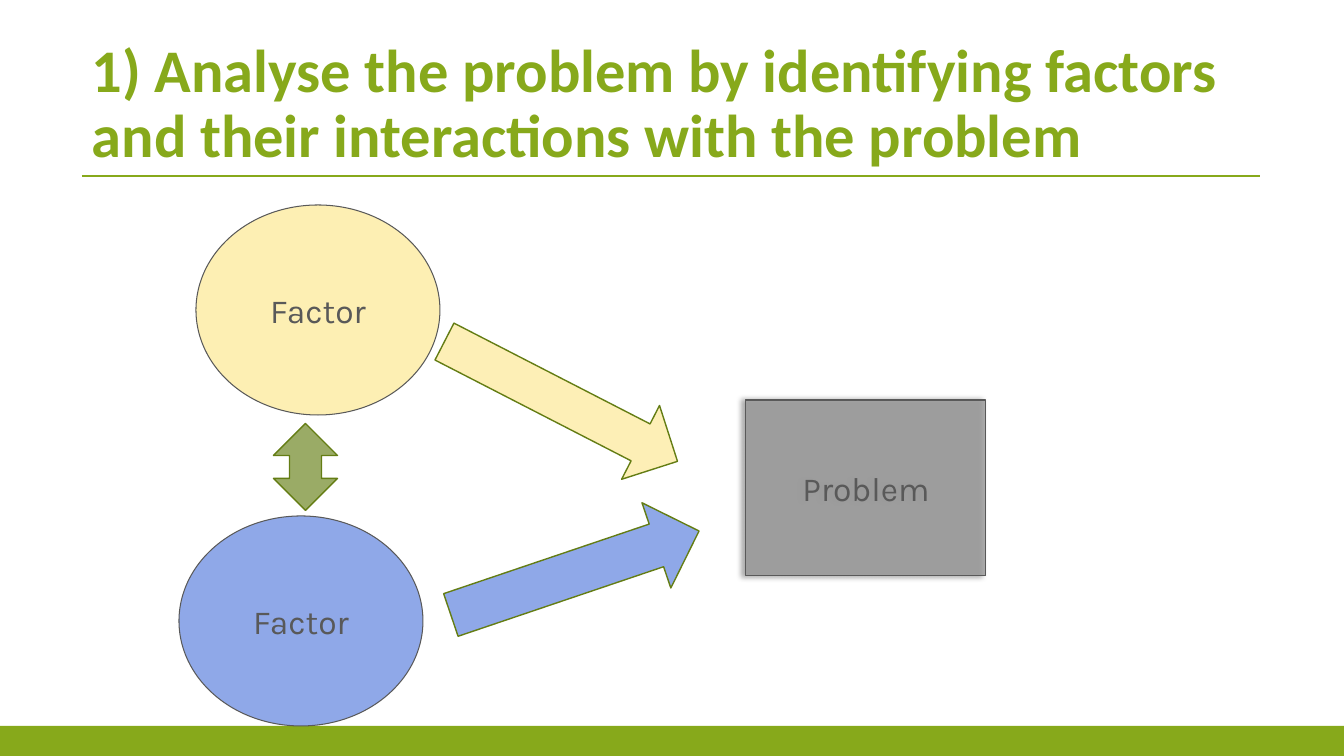
import pptx
import pptx.util
import pptx.dml.color
import pptx.enum.shapes
import pptx.enum.text
import pptx.oxml
import pptx.oxml.ns

SHAPE = pptx.enum.shapes.MSO_SHAPE
COLORS = {
    "green": "87A91B", "dark_green": "647D14", "olive": "657F14",
    "yellow": "FDE270", "pale_yellow": "FDEBA0", "blue": "8FA8E8",
    "grey": "999999", "text": "595959", "shadow": "000000",
}
TITLE = "1) Analyse the problem by identifying factors and their interactions with the problem"
TITLE_BOX = (82, 50, 1178, 126)
FOOTER_BOX = (0, 726, 1344, 30)

# label, preset, (left, top, width, height), fill, opacity %, has shadow
CONCEPTS = [
    ("Factor", SHAPE.OVAL, (196, 205, 244, 210), "yellow", 53, False),
    ("Factor", SHAPE.OVAL, (179, 516, 244, 210), "blue", 100, False),
    ("Problem", SHAPE.RECTANGLE, (746, 400, 240, 176), "grey", 80, True),
]
# preset, box before rotation, rotation, fill, opacity %
ARROWS = [
    (SHAPE.RIGHT_ARROW, (430, 360, 262, 83), 27.2, "pale_yellow", 76),
    (SHAPE.RIGHT_ARROW, (444, 528, 262, 90), 341.3, "blue", 100),
    (SHAPE.LEFT_RIGHT_ARROW, (262, 435, 87, 64), 90, "olive", 65),
]
TITLE_FORMAT = {"size": pptx.util.Pt(43.2), "name": "Calibri", "bold": True}
LABEL_FORMAT = {"size": pptx.util.Pt(24), "name": "Karla", "bold": False}

px = lambda length: round(length * 914400 / 100.8)
rgb = lambda name: pptx.dml.color.RGBColor.from_string(COLORS[name])


def write(shape, words, font_format, color, frame_format, paragraph_format):
    frame = shape.text_frame
    for key, value in frame_format.items():
        setattr(frame, key, value)
    paragraph = frame.paragraphs[0]
    for key, value in paragraph_format.items():
        setattr(paragraph, key, value)
    run = paragraph.add_run()
    run.text = words
    for key, value in font_format.items():
        setattr(run.font, key, value)
    run.font.color.rgb = rgb(color)


def draw(slide, preset, box, fill, opacity=100, line=None, weight=1):
    shape = slide.shapes.add_shape(preset, *map(px, box))
    shape.shadow.inherit = False
    shape.fill.solid()
    shape.fill.fore_color.rgb = rgb(fill)
    if opacity < 100:
        color = shape._element.spPr.find(".//" + pptx.oxml.ns.qn("a:srgbClr"))
        alpha = pptx.oxml.parse_xml(
            f'<a:alpha {pptx.oxml.ns.nsdecls("a")} val="{opacity * 1000}"/>')
        color.append(alpha)
    if line:
        shape.line.color.rgb = rgb(line)
        shape.line.width = pptx.util.Pt(weight)
    else:
        shape.line.fill.background()
    return shape


def cast_shadow(shape):
    """Add a soft shadow that falls to the left."""
    effects = shape._element.spPr.find(pptx.oxml.ns.qn("a:effectLst"))
    effects.append(pptx.oxml.parse_xml(
        f'<a:outerShdw {pptx.oxml.ns.nsdecls("a")} blurRad="{pptx.util.Pt(4)}" '
        f'dist="{pptx.util.Pt(3)}" dir="{180 * 60000}" rotWithShape="0">'
        f'<a:srgbClr val="{COLORS["shadow"]}"><a:alpha val="40000"/></a:srgbClr>'
        '</a:outerShdw>'))


def main():
    deck = pptx.Presentation()
    deck.slide_width, deck.slide_height = px(1344), px(756)
    slide = deck.slides.add_slide(deck.slide_layouts[6])

    draw(slide, SHAPE.RECTANGLE, FOOTER_BOX, "green")
    left, top, width, height = TITLE_BOX
    rule = slide.shapes.add_connector(
        pptx.enum.shapes.MSO_CONNECTOR.STRAIGHT,
        px(left), px(top + height), px(left + width), px(top + height))
    rule.line.color.rgb = rgb("green")
    rule.line.width = pptx.util.Pt(1.5)
    rule._element.spPr.append(
        pptx.oxml.parse_xml(f'<a:effectLst {pptx.oxml.ns.nsdecls("a")}/>'))

    title = slide.shapes.add_textbox(*map(px, TITLE_BOX))
    write(title, TITLE, TITLE_FORMAT, "green",
          {"word_wrap": True, "vertical_anchor": pptx.enum.text.MSO_ANCHOR.BOTTOM},
          {"line_spacing": 0.9})

    for label, preset, box, fill, opacity, has_shadow in CONCEPTS:
        concept = draw(slide, preset, box, fill, opacity, "text", 0.75)
        if has_shadow:
            cast_shadow(concept)
        write(concept, label, LABEL_FORMAT, "text",
              {"word_wrap": False, "vertical_anchor": pptx.enum.text.MSO_ANCHOR.MIDDLE},
              {"alignment": pptx.enum.text.PP_ALIGN.CENTER})

    for preset, box, rotation, fill, opacity in ARROWS:
        arrow = draw(slide, preset, box, fill, opacity, "dark_green")
        arrow.rotation = rotation

    deck.save("out.pptx")


if __name__ == "__main__":
    main()
